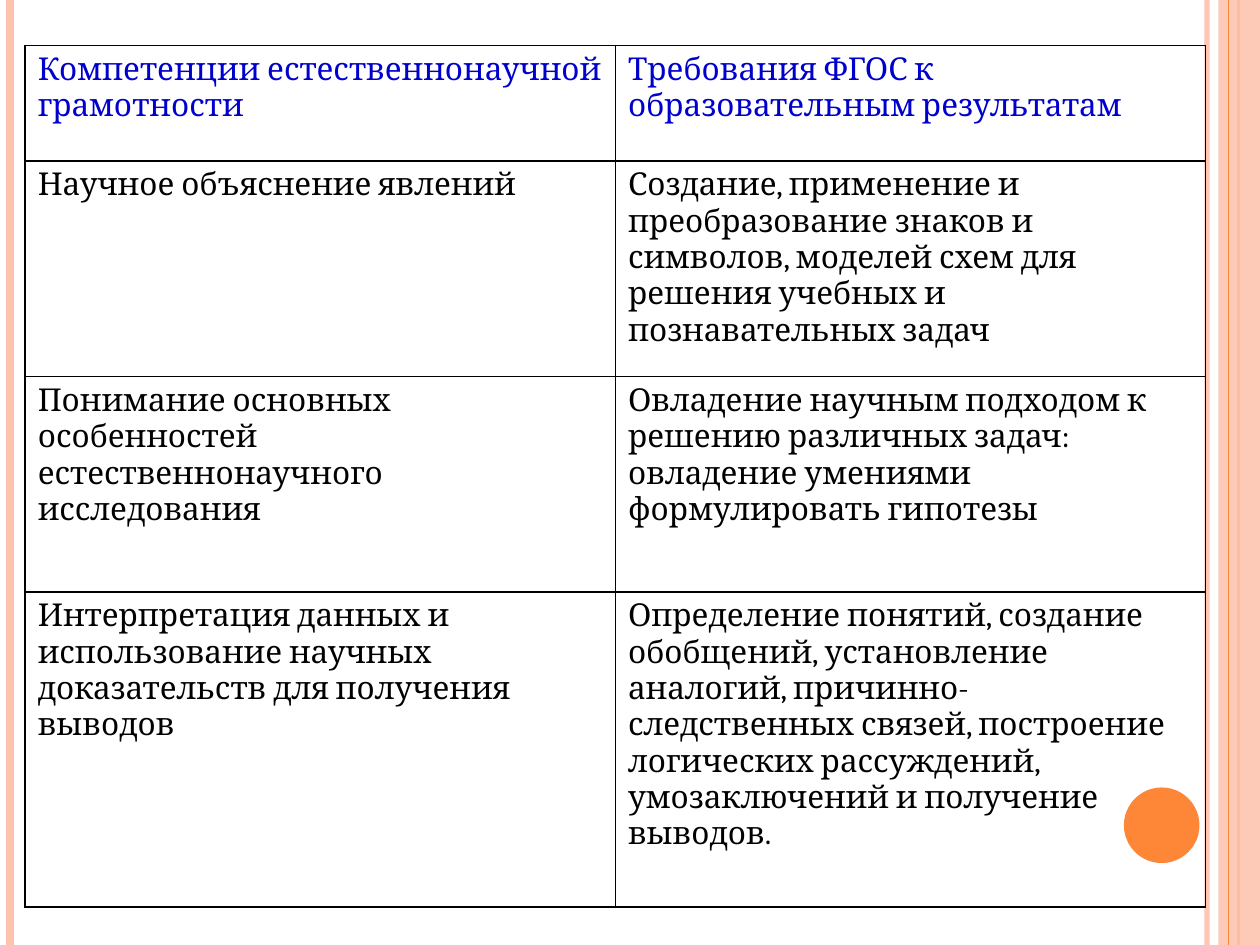
import pptx
import pptx.dml.color
import pptx.enum.shapes
import pptx.oxml
import pptx.oxml.ns
import pptx.util
from pptx.util import Inches

NS = pptx.oxml.ns.nsdecls("a")
SHAPES = pptx.enum.shapes.MSO_SHAPE
PEACH, ORANGE, BLACK, BLUE = "FEC3AE", "FE8637", "000000", "0000CC"

COMPETENCES = [
    ("Компетенции естественнонаучной грамотности",
     "Требования ФГОС к образовательным результатам"),
    ("Научное объяснение явлений",
     "Создание, применение и преобразование знаков и символов, моделей схем "
     "для решения учебных и познавательных задач"),
    ("Понимание основных особенностей естественнонаучного исследования",
     "Овладение научным подходом к решению различных задач: "
     "овладение умениями формулировать гипотезы"),
    ("Интерпретация данных и использование научных доказательств "
     "для получения выводов",
     "Определение понятий, создание обобщений, установление аналогий, "
     "причинно-следственных связей, построение логических рассуждений, "
     "умозаключений и получение выводов."),
]
ROW_HEIGHTS = [0.92, 1.71, 1.71, 2.5]


def rgb(value):
    return pptx.dml.color.RGBColor.from_string(value)


def set_opacity(fill, percent):
    """Make a solid fill, of a shape or a line, partly transparent."""
    color = fill._xPr.find(".//" + pptx.oxml.ns.qn("a:srgbClr"))
    color.append(pptx.oxml.parse_xml(f'<a:alpha {NS} val="{percent * 1000}"/>'))


class SlideBuilder:
    font = {"name": "Cambria", "size": pptx.util.Pt(18), "bold": False}
    border_width = pptx.util.Pt(1)

    def __init__(self, slide):
        self.slide = slide

    def vertical_line(self, x, color, width, opacity=100):
        rule = self.slide.shapes.add_connector(
            pptx.enum.shapes.MSO_CONNECTOR.STRAIGHT,
            Inches(x), 0, Inches(x), Inches(7.5))
        rule.line.color.rgb = rgb(color)
        rule.line.width = pptx.util.Pt(width)
        if opacity < 100:
            set_opacity(rule.line.fill, opacity)
        rule._element.spPr.append(pptx.oxml.parse_xml(f"<a:effectLst {NS}/>"))

    def shape(self, kind, left, top, width, height, color, opacity=100):
        figure = self.slide.shapes.add_shape(
            kind, Inches(left), Inches(top), Inches(width), Inches(height))
        figure.shadow.inherit = False
        figure.fill.solid()
        figure.fill.fore_color.rgb = rgb(color)
        figure.line.fill.background()
        if opacity < 100:
            set_opacity(figure.fill, opacity)

    def cell(self, cell, text, color):
        cell.text = text
        font = cell.text_frame.paragraphs[0].runs[0].font
        for name, value in self.font.items():
            setattr(font, name, value)
        font.color.rgb = rgb(color)
        properties = cell._tc.get_or_add_tcPr()
        for side in "LRTB":
            properties.append(pptx.oxml.parse_xml(
                f'<a:ln{side} {NS} w="{self.border_width}"><a:solidFill>'
                f'<a:srgbClr val="{BLACK}"/></a:solidFill></a:ln{side}>'))
        cell.fill.background()

    def table(self, left, top, width, heights, rows):
        table = self.slide.shapes.add_table(
            len(rows), len(rows[0]), Inches(left), Inches(top),
            Inches(width), Inches(sum(heights))).table
        table.first_row = table.horz_banding = False
        for index, (height, texts) in enumerate(zip(heights, rows)):
            table.rows[index].height = Inches(height)
            for column, text in enumerate(texts):
                self.cell(table.cell(index, column), text,
                          BLACK if index else BLUE)


def main():
    deck = pptx.Presentation()
    deck.slide_width, deck.slide_height = Inches(10), Inches(7.5)
    builder = SlideBuilder(deck.slides.add_slide(deck.slide_layouts[6]))

    builder.vertical_line(9.58, PEACH, 3, opacity=93)
    builder.vertical_line(0.08, PEACH, 4.5)
    builder.vertical_line(9.83, ORANGE, 1.5)
    builder.shape(SHAPES.RECTANGLE, 9.67, 0, 0.33, 7.5, PEACH, opacity=87)
    builder.vertical_line(9.75, ORANGE, 0.75)
    builder.shape(SHAPES.OVAL, 8.92, 6.25, 0.6, 0.6, ORANGE)
    builder.table(0.2, 0.36, 9.37, ROW_HEIGHTS, COMPETENCES)

    deck.save("out.pptx")


if __name__ == "__main__":
    main()
